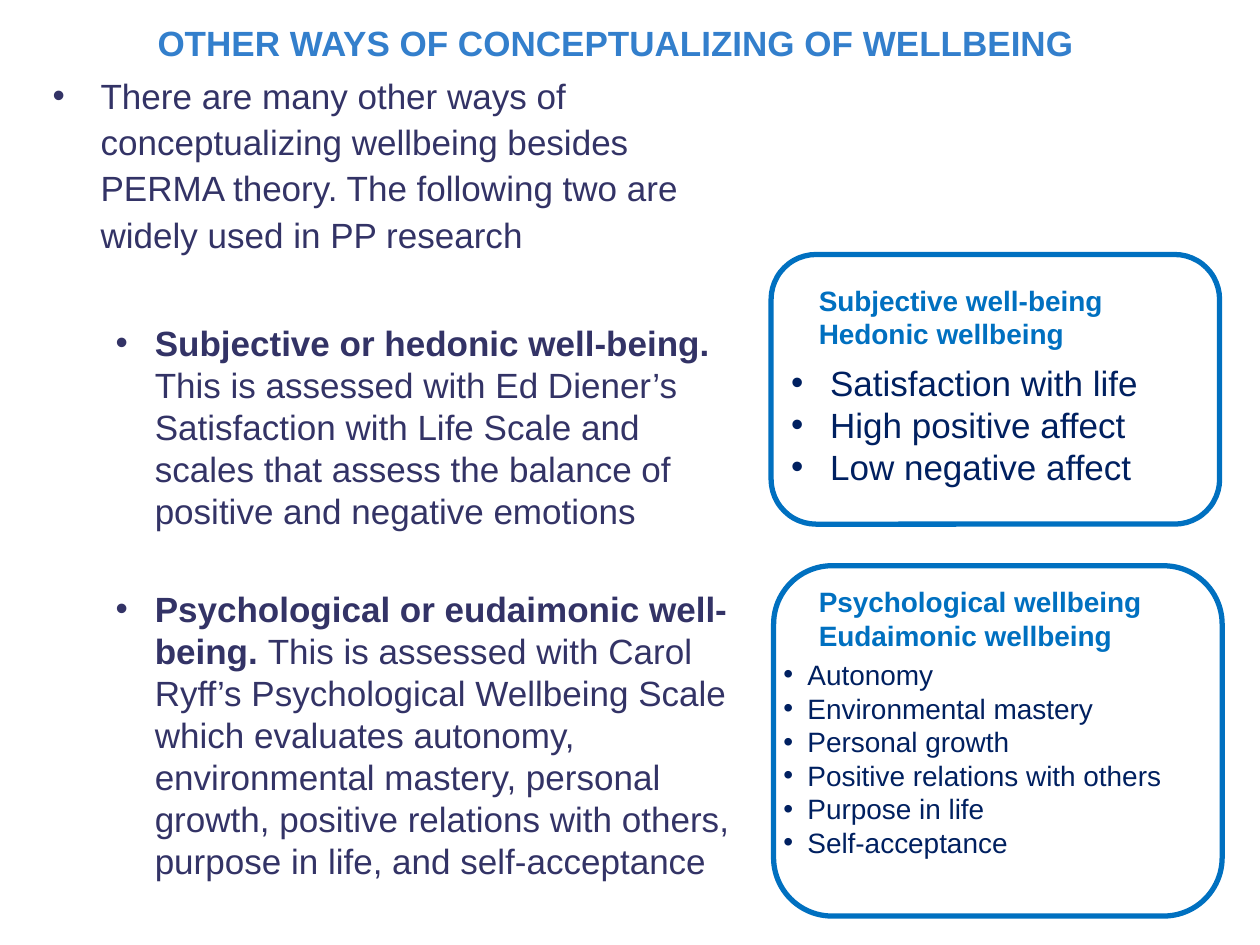
from dataclasses import dataclass

from lxml.etree import SubElement
from pptx import Presentation
from pptx.dml.color import RGBColor
from pptx.enum.shapes import MSO_SHAPE as Shape
from pptx.enum.text import MSO_ANCHOR as Anchor, MSO_AUTO_SIZE as AutoSize, PP_ALIGN as Align
from pptx.oxml.ns import qn
from pptx.util import Inches, Pt

COLUMNS, ROWS = 100, 75
CELL = Inches(0.1)


@dataclass(frozen=True)
class Theme:
    font: str = "Arial"
    title: str = "337FCC"
    body: str = "333366"
    accent: str = "0070C0"
    item: str = "002060"
    large: int = 20
    small: int = 16
    outline: int = 3


@dataclass(frozen=True)
class Card:
    """Frame is left, top, width, height; list_left and the rows are grid positions."""
    frame: tuple
    heading: tuple
    heading_row: float
    items: tuple
    list_left: float
    list_row: float
    item_size: int
    indent: float


THEME = Theme()
HEADING_LEFT, HEADING_WIDTH, HEADING_HEIGHT = 64, 29, 6.4

INTRO = ("There are many other ways of conceptualizing wellbeing besides PERMA theory. "
         "The following two are widely used in PP research")
# Term, explanation, space before in points
APPROACHES = (
    ("Subjective or hedonic well-being. ",
     "This is assessed with Ed Diener’s Satisfaction with Life Scale and scales that "
     "assess the balance of positive and negative emotions", 38),
    ("Psychological or eudaimonic well-being. ",
     "This is assessed with Carol Ryff’s Psychological Wellbeing Scale which evaluates "
     "autonomy, environmental mastery, personal growth, positive relations with others, "
     "purpose in life, and self-acceptance", 32),
)
CARDS = (
    Card((61.2, 20.2, 35.6, 21.4), ("Subjective well-being", "Hedonic wellbeing"), 22,
         ("Satisfaction with life", "High positive affect", "Low negative affect"),
         61.8, 28.2, THEME.large, 0.31),
    Card((61.4, 44.9, 35.6, 27.8), ("Psychological wellbeing", "Eudaimonic wellbeing"), 45.9,
         ("Autonomy", "Environmental mastery", "Personal growth",
          "Positive relations with others", "Purpose in life", "Self-acceptance"),
         61.2, 51.7, THEME.small, 0.19),
)


def grid(*cells):
    return [int(CELL * cell) for cell in cells]


def format_run(run, size, color, bold=False):
    run.font.name = THEME.font
    run.font.size = Pt(size)
    run.font.bold = bold
    run.font.color.rgb = RGBColor.from_string(color)


def set_bullet(paragraph, margin, hanging):
    properties = paragraph._p.get_or_add_pPr()
    properties.set("marL", str(Inches(margin)))
    properties.set("indent", str(-Inches(hanging)))
    SubElement(properties, qn("a:buFont"), typeface=THEME.font)
    SubElement(properties, qn("a:buChar"), char="•")


def add_text_frame(slide, left, top, width, height):
    text_frame = slide.shapes.add_textbox(*grid(left, top, width, height)).text_frame
    text_frame.word_wrap = True
    return text_frame


def add_lines(slide, area, lines, size, color, bold=False, indent=None):
    text_frame = add_text_frame(slide, *area)
    text_frame.text = "\n".join(lines)
    for paragraph in text_frame.paragraphs:
        format_run(paragraph.runs[0], size, color, bold)
        if indent:
            set_bullet(paragraph, indent, indent)


def set_title(slide, text):
    title = slide.shapes.title
    title.left, title.top, title.width, title.height = grid(11.5, 0.9, 77, 3.9)
    text_frame = title.text_frame
    text_frame.text = text
    text_frame.auto_size = AutoSize.NONE
    text_frame.vertical_anchor = Anchor.TOP
    paragraph = text_frame.paragraphs[0]
    paragraph.alignment = Align.LEFT
    paragraph.line_spacing = 1.1
    format_run(paragraph.runs[0], THEME.large, THEME.title, bold=True)


def add_explanation(slide):
    text_frame = add_text_frame(slide, 3.2, 5.1, 56.2, 66.2)
    intro = text_frame.paragraphs[0]
    intro.text = INTRO
    intro.line_spacing = 1.1
    format_run(intro.runs[0], THEME.large, THEME.body)
    set_bullet(intro, 0.38, 0.38)
    for term, explanation, space in APPROACHES:
        paragraph = text_frame.add_paragraph()
        paragraph.level = 1
        paragraph.space_before = Pt(space)
        for text, bold in ((term, True), (explanation, False)):
            run = paragraph.add_run()
            run.text = text
            format_run(run, THEME.large, THEME.body, bold)
        set_bullet(paragraph, 0.81, 0.31)


def add_card(slide, card):
    left, top, width, height = card.frame
    add_lines(slide, (HEADING_LEFT, card.heading_row, HEADING_WIDTH, HEADING_HEIGHT),
              card.heading, THEME.small, THEME.accent, bold=True)
    add_lines(slide, (card.list_left, card.list_row, width, top + height - card.list_row),
              card.items, card.item_size, THEME.item, indent=card.indent)
    outline = slide.shapes.add_shape(Shape.ROUNDED_RECTANGLE, *grid(*card.frame))
    outline.shadow.inherit = False
    outline.fill.background()
    outline.line.color.rgb = RGBColor.from_string(THEME.accent)
    outline.line.width = Pt(THEME.outline)


def main():
    presentation = Presentation()
    presentation.slide_width, presentation.slide_height = grid(COLUMNS, ROWS)
    slide = presentation.slides.add_slide(presentation.slide_layouts.get_by_name("Title Only"))
    set_title(slide, "OTHER WAYS OF CONCEPTUALIZING OF WELLBEING")
    add_explanation(slide)
    for card in CARDS:
        add_card(slide, card)
    presentation.save("out.pptx")


if __name__ == "__main__":
    main()
